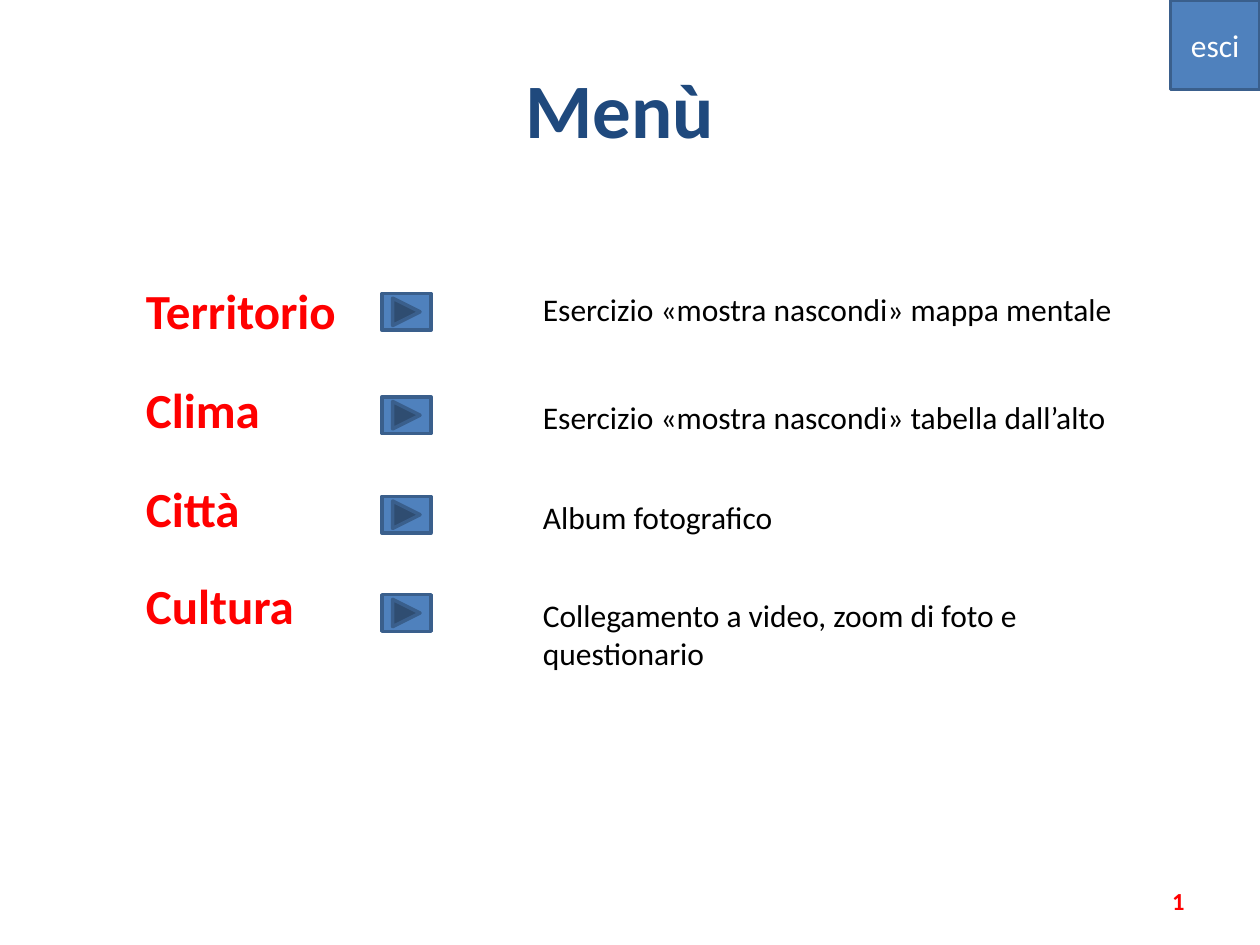
from pptx import Presentation, util as u
from pptx.dml.color import RGBColor
from pptx.enum import shapes, text

BLUE, EDGE, RED = "4F81BD", "3A5F8C", "FF0000"
KIND = shapes.MSO_SHAPE
ALIGN = text.PP_ALIGN
MID = text.MSO_ANCHOR.MIDDLE

deck = Presentation()
deck.slide_width, deck.slide_height = u.Inches(10), u.Inches(7.5)
slide = deck.slides.add_slide(deck.slide_layouts[6])


def write(words, box, size=18, color="000000", bold=False,
          align=ALIGN.LEFT, anchor=text.MSO_ANCHOR.TOP, shape=None):
    if shape is None:
        shape = slide.shapes.add_textbox(*map(u.Inches, box))
    frame = shape.text_frame
    frame.word_wrap = True
    frame.vertical_anchor = anchor
    par = frame.paragraphs[0]
    par.alignment = align
    run = par.add_run()
    run.text = words
    run.font.name = "Calibri"
    run.font.size = u.Pt(size)
    run.font.bold = bold
    run.font.color.rgb = RGBColor.from_string(color)


def button(kind, box):
    shape = slide.shapes.add_shape(kind, *map(u.Inches, box))
    shape.shadow.inherit = False
    shape.fill.solid()
    shape.fill.fore_color.rgb = RGBColor.from_string(BLUE)
    shape.line.color.rgb = RGBColor.from_string(EDGE)
    shape.line.width = u.Pt(2)
    return shape


write("Menù", (0.67, 0.05, 8.5, 1.61), size=44, color="1F497D", bold=True,
      align=ALIGN.CENTER, anchor=MID)

rows = [
    ("Territorio", 2.18, 2.33, 2.25, 0.4, "Esercizio «mostra nascondi» mappa mentale"),
    ("Clima", 2.96, 3.15, 3.11, 0.4, "Esercizio «mostra nascondi» tabella dall’alto"),
    ("Città", 3.75, 3.94, 3.9, 0.4, "Album fotografico"),
    ("Cultura", 4.52, 4.72, 4.68, 0.71, "Collegamento a video, zoom di foto e questionario"),
]
for topic, top, mark, low, tall, task in rows:
    write(topic, (1.06, top, 1.81, 0.57), size=28, color=RED, bold=True)
    button(KIND.ACTION_BUTTON_FORWARD_OR_NEXT, (3.03, mark, 0.39, 0.29))
    write(task, (4.21, low, 4.72, tall))

write("1", (7.17, 6.95, 2.33, 0.4), size=14, color=RED, bold=True,
      align=ALIGN.RIGHT, anchor=MID)

leave = button(KIND.ACTION_BUTTON_CUSTOM, (9.29, 0, 0.71, 0.71))
write("esci", None, color="FFFFFF", align=ALIGN.CENTER, anchor=MID, shape=leave)

deck.save("out.pptx")
